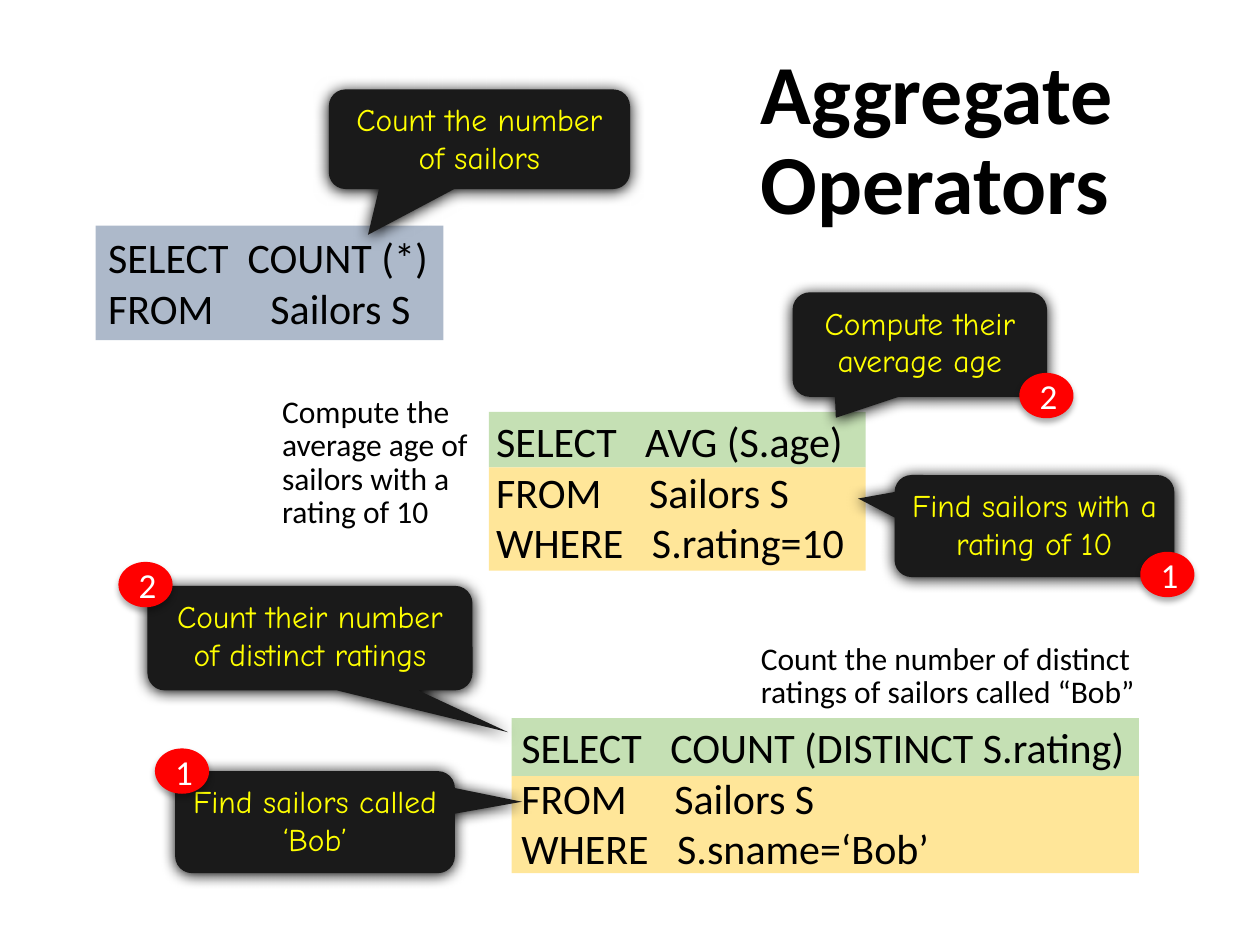
"""Build the Aggregate Operators slide with SQL examples and callouts."""
from lxml import etree
from pptx import Presentation
from pptx.dml.color import RGBColor
from pptx.enum.shapes import MSO_SHAPE as SHAPE
from pptx.enum.text import MSO_ANCHOR as ANCHOR, MSO_AUTO_SIZE as AUTO, PP_ALIGN as ALIGN
from pptx.oxml.ns import qn
from pptx.util import Inches, Pt

COLORS = {"black": "000000", "white": "FFFFFF", "yellow": "FFFF00", "red": "FF0000",
          "callout": "1A1A1A", "blue": "ADB9CA", "green": "C5E0B4", "sand": "FFE699"}


def add_box(kind, at, fill=None, shadow=None):
    box = [Inches(v) for v in at]
    if kind is None:
        return s.shapes.add_textbox(*box)
    sp = s.shapes.add_shape(kind, *box)
    sp.shadow.inherit = False
    sp.fill.solid()
    sp.fill.fore_color.rgb = RGBColor.from_string(COLORS[fill])
    sp.line.fill.background()
    if shadow:
        alpha, blur, dist = shadow
        effects = sp._element.spPr.find(qn("a:effectLst"))
        outer = etree.SubElement(effects, qn("a:outerShdw"), blurRad=str(Pt(blur)), dist=str(Pt(dist)),
                                 dir="5400000", rotWithShape="0")
        color = etree.SubElement(outer, qn("a:srgbClr"), val=COLORS["black"])
        etree.SubElement(color, qn("a:alpha"), val=str(alpha * 1000))
    return sp


def add_text(sp, lines, size, color="black", font="Calibri", align=ALIGN.LEFT, anchor=ANCHOR.TOP,
             wrap=True, grow=False, spacing=None, bold=False):
    tf = sp.text_frame
    tf.word_wrap = wrap
    tf.vertical_anchor = anchor
    tf.auto_size = AUTO.SHAPE_TO_FIT_TEXT if grow else AUTO.NONE
    for i, line in enumerate(lines):
        p = tf.add_paragraph() if i else tf.paragraphs[0]
        p.text = line
        p.alignment = align
        p.line_spacing = spacing
        p.font.name = font
        p.font.size = Pt(size)
        p.font.bold = bold
        p.font.color.rgb = RGBColor.from_string(COLORS[color])


prs = Presentation()
prs.slide_width, prs.slide_height = Inches(10), Inches(7.5)
s = prs.slides.add_slide(prs.slide_layouts[6])

title = add_box(None, (5.94, 0.41, 3.12, 1.44))
add_text(title, ["Aggregate Operators"], 48, anchor=ANCHOR.MIDDLE, spacing=0.9, bold=True)

bands = [
    ((4.06, 5.7, 4.98, 0.46), "green"),
    ((4.06, 6.16, 4.98, 0.77), "sand"),
    ((3.88, 3.27, 2.99, 0.44), "green"),
    ((3.88, 3.71, 2.99, 0.82), "sand"),
]
for at, fill in bands:
    add_box(SHAPE.RECTANGLE, at, fill)

queries = [
    (SHAPE.RECTANGLE, (0.76, 1.79, 2.76, 0.91), "blue", ["SELECT  COUNT (*)", "FROM      Sailors S"]),
    (None, (4.04, 5.68, 5.03, 1.31), None,
     ["SELECT   COUNT (DISTINCT S.rating)", "FROM     Sailors S", "WHERE   S.sname=‘Bob’"]),
    (None, (3.84, 3.25, 3.06, 1.31), None,
     ["SELECT   AVG (S.age)", "FROM     Sailors S", "WHERE   S.rating=10"]),
]
for kind, at, fill, lines in queries:
    add_text(add_box(kind, at, fill), lines, 24, wrap=False, grow=True)

callouts = [
    ((2.61, 0.71, 2.39, 0.79), (-0.37, 0.96), "Count the number of sailors"),
    ((1.39, 6.12, 2.22, 0.81), (0.74, -0.2), "Find sailors called ‘Bob’"),
    ((1.17, 4.65, 2.58, 0.83), (0.61, 0.9), "Count their number of distinct ratings"),
    ((7.1, 3.77, 2.22, 0.81), (-0.63, -0.27), "Find sailors with a rating of 10"),
    ((6.29, 2.32, 2.02, 0.83), (-0.33, 0.7), "Compute their average age"),
]
for at, tip, text in callouts:
    sp = add_box(SHAPE.ROUNDED_RECTANGULAR_CALLOUT, at, "callout", (100, 8.5, 1))
    sp.adjustments[0], sp.adjustments[1] = tip
    add_text(sp, [text], 18, "yellow", "Comic Neue", ALIGN.CENTER)

badges = [(1.23, 5.94, "1"), (0.94, 4.46, "2"), (9.05, 4.38, "1"), (8.09, 2.96, "2")]
for left, top, number in badges:
    sp = add_box(SHAPE.OVAL, (left, top, 0.43, 0.36), "red", (32, 3.5, 2.2))
    add_text(sp, [number], 20, "white", align=ALIGN.CENTER, anchor=ANCHOR.MIDDLE)

captions = [
    ((5.94, 5.06, 3.25, 0.63), "Count the number of distinct ratings of sailors called “Bob”"),
    ((2.14, 3.1, 1.74, 1.17), "Compute the average age of sailors with a rating of 10"),
]
for at, text in captions:
    add_text(add_box(None, at), [text], 18, grow=True, spacing=Pt(19))

prs.save("out.pptx")
